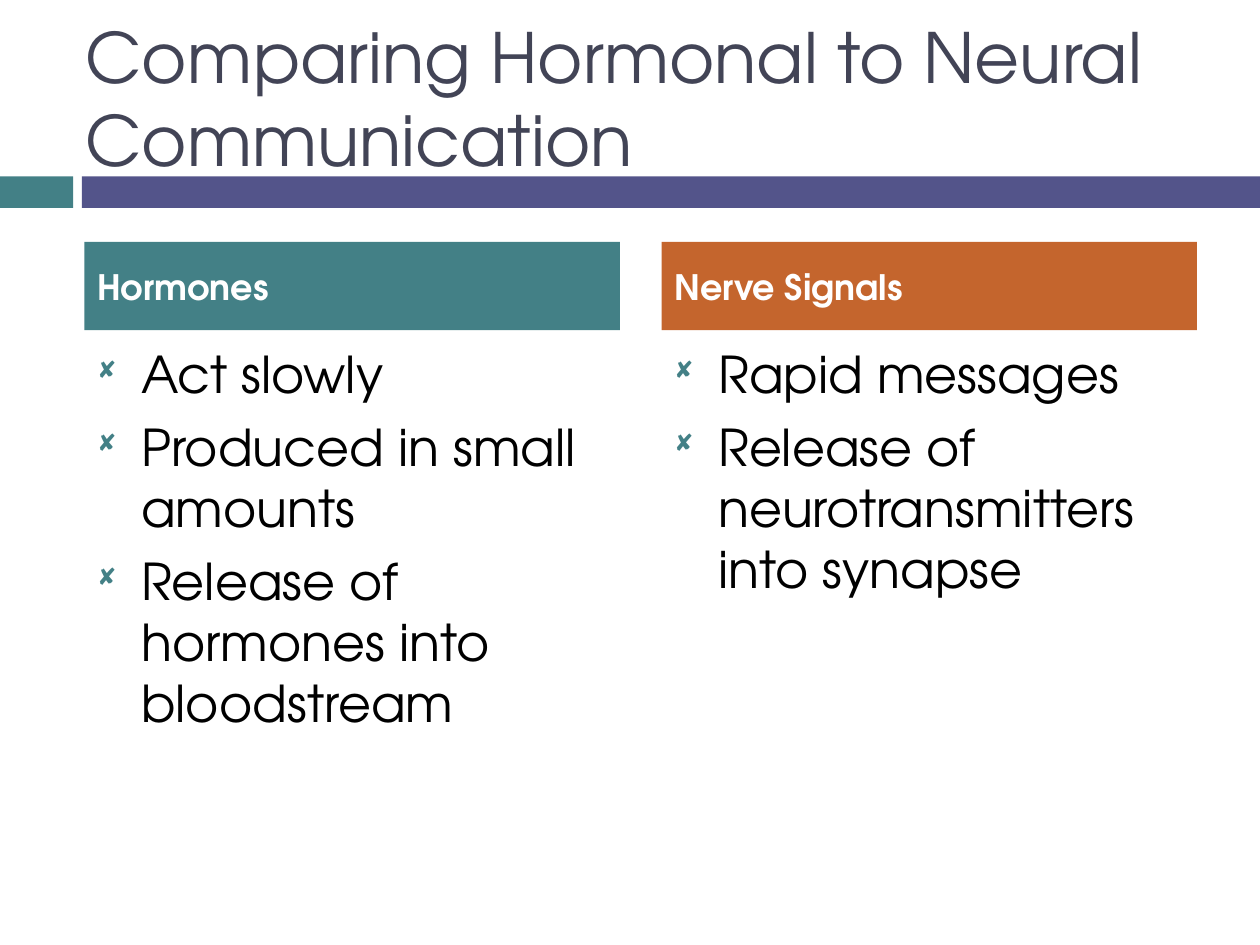
from dataclasses import dataclass

import pptx
import pptx.dml.color
import pptx.enum.shapes
import pptx.enum.text
import pptx.oxml
import pptx.oxml.ns
import pptx.util
from pptx.util import Inches

FONT = "TeX Gyre Adventor"
COLORS = {
    "teal": "438086",
    "purple": "53548A",
    "orange": "C4652D",
    "slate": "424456",
    "black": "000000",
    "white": "FFFFFF",
}
COLUMN_WIDTH = 4.25


@dataclass
class Column:
    left: float
    heading: str
    color: str
    points: list[str]
    heading_idx: int
    points_idx: int


COLUMNS = [
    Column(0.67, "Hormones", "teal",
           ["Act slowly", "Produced in small amounts",
            "Release of hormones into bloodstream"], 1, 2),
    Column(5.25, "Nerve Signals", "orange",
           ["Rapid messages", "Release of neurotransmitters into synapse"], 3, 4),
]


def rgb(color: str) -> pptx.dml.color.RGBColor:
    return pptx.dml.color.RGBColor.from_string(COLORS[color])


def fill_solid(shape, color: str) -> None:
    shape.fill.solid()
    shape.fill.fore_color.rgb = rgb(color)


def place(shape, left: float, top: float, width: float, height: float) -> None:
    shape.left, shape.top = Inches(left), Inches(top)
    shape.width, shape.height = Inches(width), Inches(height)


def write(shape, lines: list[str], size: float, color: str, anchor: str,
          bold: bool = False, gap: float = 0) -> None:
    """Fill a placeholder with left-aligned paragraphs, gap points apart."""
    frame = shape.text_frame
    frame.text = "\n".join(lines)
    frame.word_wrap = True
    frame.auto_size = pptx.enum.text.MSO_AUTO_SIZE.NONE
    frame.vertical_anchor = pptx.enum.text.MSO_ANCHOR[anchor]
    for index, paragraph in enumerate(frame.paragraphs):
        paragraph.alignment = pptx.enum.text.PP_ALIGN.LEFT
        paragraph.space_before = pptx.util.Pt(gap if index else 0)
        paragraph.font.name = FONT
        paragraph.font.size = pptx.util.Pt(size)
        paragraph.font.bold = bold
        paragraph.font.color.rgb = rgb(color)


def add_bullets(shape, color: str) -> None:
    indent = Inches(0.35)
    namespace = pptx.oxml.ns.nsdecls("a")
    for paragraph in shape.text_frame.paragraphs:
        properties = paragraph._p.get_or_add_pPr()
        properties.set("marL", str(indent))
        properties.set("indent", str(-indent))
        bullet_parts = [
            f'<a:buClr {namespace}><a:srgbClr val="{COLORS[color]}"/></a:buClr>',
            f'<a:buSzPct {namespace} val="60000"/>',
            f'<a:buFont {namespace} typeface="Wingdings"/>',
            f'<a:buChar {namespace} char="◻"/>',
        ]
        default_run = properties.find(pptx.oxml.ns.qn("a:defRPr"))
        for part in bullet_parts:
            default_run.addprevious(pptx.oxml.parse_xml(part))


def add_band(slide, left: float, width: float, color: str) -> None:
    band = slide.shapes.add_shape(
        pptx.enum.shapes.MSO_SHAPE.RECTANGLE,
        Inches(left), Inches(1.4), Inches(width), Inches(0.25))
    band.shadow.inherit = False
    fill_solid(band, color)
    band.line.fill.background()


def add_column(slide, column: Column) -> None:
    placeholders = {p.placeholder_format.idx: p for p in slide.placeholders}
    heading = placeholders[column.heading_idx]
    place(heading, column.left, 1.92, COLUMN_WIDTH, 0.7)
    fill_solid(heading, column.color)
    write(heading, [column.heading], 20, "white", "MIDDLE", bold=True)

    points = placeholders[column.points_idx]
    place(points, column.left, 2.67, COLUMN_WIDTH, 3.92)
    write(points, column.points, 29, "black", "TOP", gap=7)
    add_bullets(points, "teal")


def main() -> None:
    presentation = pptx.Presentation()
    presentation.slide_width = Inches(10)
    presentation.slide_height = Inches(7.5)
    comparison_layout = presentation.slide_layouts.get_by_name("Comparison")
    slide = presentation.slides.add_slide(comparison_layout)

    add_band(slide, 0, 0.58, "teal")
    add_band(slide, 0.65, 9.35, "purple")
    title = slide.shapes.title
    place(title, 0.58, 0.3, 8.92, 0.95)
    write(title, ["Comparing Hormonal to Neural Communication"], 39.6, "slate", "MIDDLE")
    for column in COLUMNS:
        add_column(slide, column)

    presentation.save("out.pptx")


if __name__ == "__main__":
    main()
